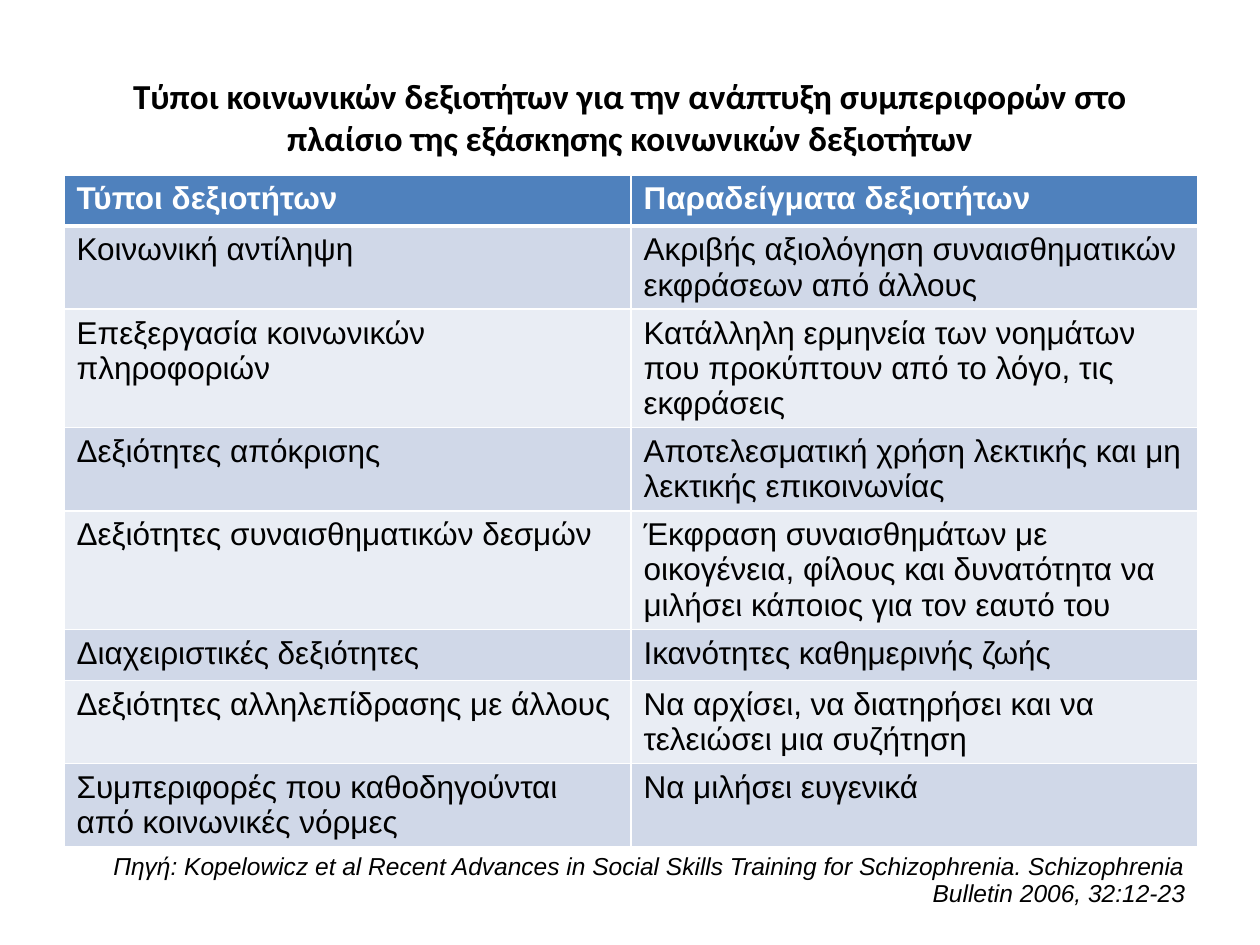
import pptx
import pptx.util
import pptx.dml.color
import pptx.enum.text
import pptx.oxml
import pptx.oxml.ns

SCALE = 914400 // 126
ROW_HEIGHT = 51
HEADER = ("Τύποι δεξιοτήτων", "Παραδείγματα δεξιοτήτων")
SKILLS = [
    ("Κοινωνική αντίληψη", "Ακριβής αξιολόγηση συναισθηματικών εκφράσεων από άλλους"),
    ("Επεξεργασία κοινωνικών πληροφοριών",
     "Κατάλληλη ερμηνεία των νοημάτων που προκύπτουν από το λόγο, τις εκφράσεις"),
    ("Δεξιότητες απόκρισης", "Αποτελεσματική χρήση λεκτικής και μη λεκτικής επικοινωνίας"),
    ("Δεξιότητες συναισθηματικών δεσμών",
     "Έκφραση συναισθημάτων με οικογένεια, φίλους και δυνατότητα να μιλήσει κάποιος για τον εαυτό του"),
    ("Διαχειριστικές δεξιότητες", "Ικανότητες καθημερινής ζωής"),
    ("Δεξιότητες αλληλεπίδρασης με άλλους", "Να αρχίσει, να διατηρήσει και να τελειώσει μια συζήτηση"),
    ("Συμπεριφορές που καθοδηγούνται από κοινωνικές νόρμες", "Να μιλήσει ευγενικά"),
]
SOURCE = ("Πηγή: Kopelowicz et al Recent Advances in Social Skills Training for Schizophrenia. "
          "Schizophrenia Bulletin 2006, 32:12-23")


def style_text(frame, text, size, color, font="Arial", bold=False, italic=False):
    frame.text = text
    span = frame.paragraphs[0].runs[0]
    span.font.name = font
    span.font.size = pptx.util.Pt(size)
    span.font.bold = bold
    span.font.italic = italic
    span.font.color.rgb = pptx.dml.color.RGBColor.from_string(color)


def add_borders(cell, bottom):
    properties = cell._tc.get_or_add_tcPr()
    for index, (side, points) in enumerate((("L", 1), ("R", 1), ("T", 1), ("B", bottom))):
        properties.insert(index, pptx.oxml.parse_xml(
            f'<a:ln{side} {pptx.oxml.ns.nsdecls("a")} w="{points * 12700}">'
            f'<a:solidFill><a:srgbClr val="FFFFFF"/></a:solidFill></a:ln{side}>'))


deck = pptx.Presentation()
deck.slide_width = pptx.util.Inches(10)
deck.slide_height = pptx.util.Inches(7.5)
page = deck.slides.add_slide(deck.slide_layouts[5])

title = page.shapes.title
title.left, title.top, title.width, title.height = [n * SCALE for n in (63, 38, 1134, 157)]
title.text_frame.word_wrap = True
title.text_frame.vertical_anchor = pptx.enum.text.MSO_ANCHOR.MIDDLE
style_text(title.text_frame,
           "Τύποι κοινωνικών δεξιοτήτων για την ανάπτυξη συμπεριφορών στο "
           "πλαίσιο της εξάσκησης κοινωνικών δεξιοτήτων",
           20, "000000", font="Calibri", bold=True)
title.text_frame.paragraphs[0].alignment = pptx.enum.text.PP_ALIGN.CENTER

rows = [HEADER, *SKILLS]
frame = page.shapes.add_table(len(rows) + 1, 2, 64 * SCALE, 175 * SCALE, 1134 * SCALE, 741 * SCALE)
table = frame.table
for row in table.rows:
    row.height = ROW_HEIGHT * SCALE
frame.height = 741 * SCALE

for row_index, texts in enumerate(rows):
    is_header = row_index == 0
    fill = "4F81BD" if is_header else ("E9EDF4", "D0D8E8")[row_index % 2]
    for column_index, text in enumerate(texts):
        cell = table.cell(row_index, column_index)
        style_text(cell.text_frame, text, 18, "FFFFFF" if is_header else "000000", bold=is_header)
        cell.fill.solid()
        cell.fill.fore_color.rgb = pptx.dml.color.RGBColor.from_string(fill)
        add_borders(cell, 3 if is_header else 1)

source_cell = table.cell(len(rows), 0)
source_cell.merge(table.cell(len(rows), 1))
style_text(source_cell.text_frame, SOURCE, 14, "000000", italic=True)
source_cell.text_frame.paragraphs[0].alignment = pptx.enum.text.PP_ALIGN.RIGHT
source_cell.fill.background()
add_borders(source_cell, 1)

deck.save("out.pptx")
